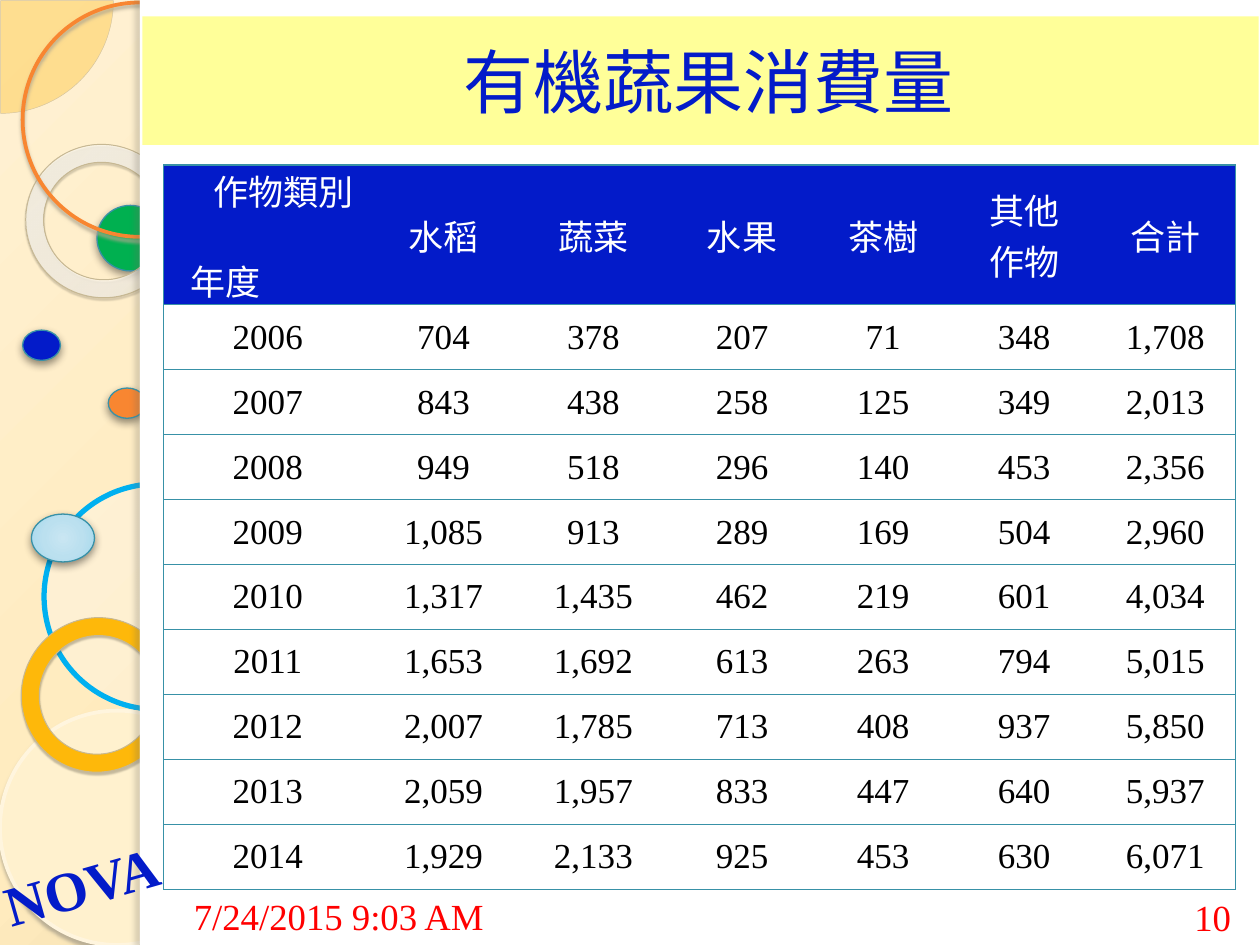
"""Build a slide with a table of organic fruit and vegetable consumption by year."""
from lxml.etree import SubElement
from pptx import Presentation
from pptx.dml.color import RGBColor
from pptx.enum.shapes import MSO_SHAPE
from pptx.enum.text import MSO_ANCHOR, PP_ALIGN
from pptx.oxml import parse_xml
from pptx.oxml.ns import nsdecls, qn
from pptx.util import Inches, Pt

FONT = "Times New Roman"
BLUE = RGBColor(0x03, 0x1B, 0xC9)
WHITE = RGBColor(0xFF, 0xFF, 0xFF)
BLACK = RGBColor(0x00, 0x00, 0x00)
RED = RGBColor(0xFF, 0x00, 0x00)
TEAL = RGBColor(0x38, 0x91, 0xA7)
YELLOW = RGBColor(0xFF, 0xFF, 0x99)
CREAM = RGBColor(0xFF, 0xF1, 0xCE)
IVORY = RGBColor(0xFE, 0xFA, 0xF4)
PALE = RGBColor(0xFF, 0xF5, 0xDE)
GOLD = RGBColor(0xFE, 0xB8, 0x0A)
ORANGE = RGBColor(0xF8, 0x86, 0x31)
GREEN = RGBColor(0x00, 0xB0, 0x50)
SKY = RGBColor(0x00, 0xB0, 0xF0)
SAND = RGBColor(0xC7, 0xB8, 0x93)
TAN = RGBColor(0xD3, 0xC3, 0x9F)

BACKDROP = ([(0, "FFF1D3", 100), (40, "FFEBBE", 100), (100, "C9B484", 100)],
            (-24, -20, 124, 120))
PEARL = ([(0, "FFFCF6", 70), (70, "FFFEFB", 55), (100, "F0D28E", 60)],
         (-408, -50, 508, 150))
ICE = ([(0, "C9E6F2", 100), (50, "BBE0EF", 100), (97, "A4D8ED", 100),
        (100, "9BD7EE", 100)], (50, 50, 50, 50))

RING_SHADOW = ("B0A68F", 85, 2, 2, 90)
DONUT_SHADOW = ("5A5444", 35, 1, 1.2, 75)
DOT_SHADOW = ("000000", 43, 5, 2, 90)
EDGE_SHADOW = ("736F63", 25, 3, 3, 180)

PIE, OVAL, DONUT, RECT = (MSO_SHAPE.PIE, MSO_SHAPE.OVAL, MSO_SHAPE.DONUT,
                          MSO_SHAPE.RECTANGLE)
DOT = dict(line=(TEAL, 0.75), shadow=DOT_SHADOW)
RING = dict(line=(SAND, 0.58), shadow=DONUT_SHADOW, adj=[0.118])

DECOR = [
    (PIE, (0.35, 3.84, 1.79, 1.79),
     dict(fill=IVORY, alpha=33, line=(SKY, 3), rot=247.8, adj=[121.964, 121.219])),
    (OVAL, (0, 5.64, 1.86, 1.86),
     dict(fill=CREAM, line=(PALE, 2.15), shadow=RING_SHADOW)),
    (DONUT, (0.16, 4.91, 1.23, 1.21), dict(fill=GOLD, rot=112.9, **RING)),
    (OVAL, (0.86, 3.08, 0.3, 0.24), dict(fill=ORANGE, **DOT)),
    (OVAL, (0.18, 2.62, 0.3, 0.24), dict(fill=BLUE, **DOT)),
    (OVAL, (0.77, 1.63, 0.53, 0.52), dict(fill=GREEN, **DOT)),
    (DONUT, (0.2, 1.15, 1.23, 1.21), dict(fill=PEARL, rot=38.6, **RING)),
    (PIE, (-0.89, -0.89, 1.79, 1.79),
     dict(fill=GOLD, alpha=33, line=(TAN, 0.25), adj=[0, 54.021])),
    (OVAL, (0.18, 0.02, 1.86, 1.86), dict(line=(ORANGE, 2.15), shadow=RING_SHADOW)),
    (RECT, (1.11, 0, 8.89, 7.5), dict(fill=WHITE)),
    (RECT, (1.11, 0, 0.08, 7.5), dict(fill=WHITE, shadow=EDGE_SHADOW)),
    (OVAL, (0.25, 4.08, 0.5, 0.38), dict(fill=ICE, **DOT)),
]

HEADER = ["作物類別\n年度", "水稻", "蔬菜", "水果", "茶樹", "其他\n作物", "合計"]
ROWS = [
    ["2006", "704", "378", "207", "71", "348", "1,708"],
    ["2007", "843", "438", "258", "125", "349", "2,013"],
    ["2008", "949", "518", "296", "140", "453", "2,356"],
    ["2009", "1,085", "913", "289", "169", "504", "2,960"],
    ["2010", "1,317", "1,435", "462", "219", "601", "4,034"],
    ["2011", "1,653", "1,692", "613", "263", "794", "5,015"],
    ["2012", "2,007", "1,785", "713", "408", "937", "5,850"],
    ["2013", "2,059", "1,957", "833", "447", "640", "5,937"],
    ["2014", "1,929", "2,133", "925", "453", "630", "6,071"],
]
COL_WIDTHS = [1.65, 1.14, 1.24, 1.12, 1.12, 1.12, 1.12]
TABLE_BOX = (1.3, 1.31, 8.51, 5.75)
HEADER_HEIGHT = 1.11


def write(tf, text, size=20, color=BLACK, bold=False, align=PP_ALIGN.CENTER,
          anchor=MSO_ANCHOR.MIDDLE):
    tf.word_wrap = True
    tf.vertical_anchor = anchor
    for i, line in enumerate(text.split("\n")):
        p = tf.paragraphs[0] if i == 0 else tf.add_paragraph()
        p.alignment = align
        r = p.add_run()
        r.text = line
        r.font.name, r.font.size, r.font.bold = FONT, Pt(size), bold
        r.font.color.rgb = color


def paint_gradient(fill, parent, gradient):
    stops, rect = gradient
    fill.solid()
    gs = "".join(f'<a:gs pos="{pos * 1000}"><a:srgbClr val="{color}">'
                 f'<a:alpha val="{alpha * 1000}"/></a:srgbClr></a:gs>'
                 for pos, color, alpha in stops)
    sides = " ".join(f'{side}="{v * 1000}"' for side, v in zip("ltrb", rect))
    parent.replace(parent.find(qn("a:solidFill")), parse_xml(
        f'<a:gradFill {nsdecls("a")} rotWithShape="1"><a:gsLst>{gs}</a:gsLst>'
        f'<a:path path="circle"><a:fillToRect {sides}/></a:path></a:gradFill>'))


def add_shape(s, kind, box, fill=None, alpha=None, line=None, shadow=None, rot=0, adj=()):
    sp = s.shapes.add_shape(kind, *map(Inches, box))
    sp.rotation = rot
    for i, value in enumerate(adj):
        sp.adjustments[i] = value
    spPr = sp._element.spPr
    if fill is None:
        sp.fill.background()
    elif isinstance(fill, RGBColor):
        sp.fill.solid()
        sp.fill.fore_color.rgb = fill
        if alpha:
            SubElement(spPr.find(qn("a:solidFill"))[0], qn("a:alpha"), val=str(alpha * 1000))
    else:
        paint_gradient(sp.fill, spPr, fill)
    if line:
        sp.line.color.rgb, sp.line.width = line[0], Pt(line[1])
    else:
        sp.line.fill.background()
    sp.shadow.inherit = False
    if shadow:
        color, opacity, blur, dist, angle = shadow
        spPr.find(qn("a:effectLst")).append(parse_xml(
            f'<a:outerShdw {nsdecls("a")} blurRad="{Pt(blur)}" dist="{Pt(dist)}" '
            f'dir="{angle * 60000}" rotWithShape="0"><a:srgbClr val="{color}">'
            f'<a:alpha val="{opacity * 1000}"/></a:srgbClr></a:outerShdw>'))
    return sp


def set_borders(cell, visible):
    tcPr = cell._tc.get_or_add_tcPr()
    for i, side in enumerate("LRTB"):
        paint = (f'<a:solidFill><a:srgbClr val="{TEAL}"/></a:solidFill>'
                 if side in visible else "<a:noFill/>")
        tcPr.insert(i, parse_xml(
            f'<a:ln{side} {nsdecls("a")} w="{Pt(0.75)}">{paint}</a:ln{side}>'))


def add_consumption_table(s):
    table = s.shapes.add_table(len(ROWS) + 1, len(HEADER), *map(Inches, TABLE_BOX)).table
    row_height = (TABLE_BOX[3] - HEADER_HEIGHT) / len(ROWS)
    for col, width in zip(table.columns, COL_WIDTHS):
        col.width = Inches(width)
    for i, values in enumerate([HEADER] + ROWS):
        table.rows[i].height = Inches(row_height if i else HEADER_HEIGHT)
        for j, text in enumerate(values):
            cell = table.cell(i, j)
            cell.margin_left = cell.margin_right = Inches(0.07)
            cell.margin_top = cell.margin_bottom = 0
            write(cell.text_frame, text, color=BLACK if i else WHITE)
            cell.vertical_anchor = MSO_ANCHOR.MIDDLE if i or j else MSO_ANCHOR.TOP
            if i:
                cell.fill.background()
            else:
                cell.fill.solid()
                cell.fill.fore_color.rgb = BLUE
            set_borders(cell, "TB" + "L" * (j == 0) + "R" * (j == len(HEADER) - 1))
    crop, year = table.cell(0, 0).text_frame.paragraphs
    crop._p.get_or_add_pPr().set("marL", str(Inches(0.25)))
    year.alignment = PP_ALIGN.LEFT
    year.space_before = Pt(22)
    year._p.get_or_add_pPr().set("marL", str(Inches(0.14)))


def add_text(s, box, text, rot=0, **style):
    sp = s.shapes.add_textbox(*map(Inches, box))
    sp.rotation = rot
    write(sp.text_frame, text, **style)


def main():
    prs = Presentation()
    prs.slide_width, prs.slide_height = Inches(10), Inches(7.5)
    s = prs.slides.add_slide(prs.slide_layouts[6])
    bg_fill = s.background.fill
    paint_gradient(bg_fill, s._element.find(".//" + qn("p:bgPr")), BACKDROP)
    for kind, box, style in DECOR:
        add_shape(s, kind, box, **style)
    add_text(s, (-0.23, 6.7, 1.75, 0.64), "NOVA", rot=344.1, size=32, color=BLUE,
             bold=True, anchor=MSO_ANCHOR.TOP)
    title = add_shape(s, RECT, (1.13, 0.13, 8.86, 1.02), fill=YELLOW)
    write(title.text_frame, " 有機蔬果消費量", size=40, color=BLUE)
    add_consumption_table(s)
    footer = dict(size=21, color=RED, anchor=MSO_ANCHOR.BOTTOM)
    add_text(s, (1.44, 6.97, 2.88, 0.52), "7/24/2015 9:03 AM", align=PP_ALIGN.LEFT, **footer)
    add_text(s, (9.25, 6.98, 0.75, 0.52), "10", **footer)
    prs.save("out.pptx")


if __name__ == "__main__":
    main()
